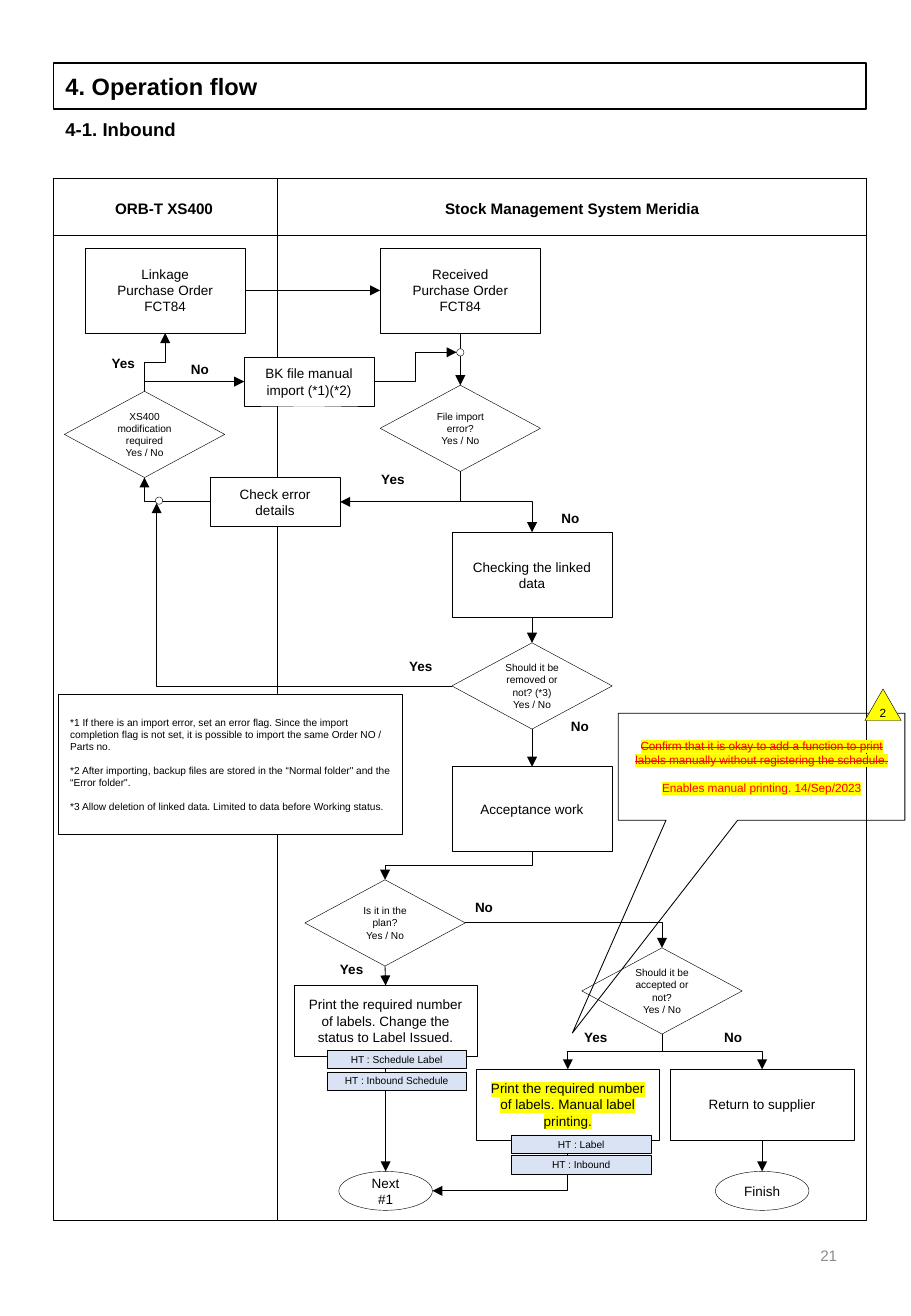
import lxml.etree
import pptx
import pptx.dml.color
import pptx.enum.shapes
import pptx.enum.text
import pptx.oxml.ns
import pptx.util

SHAPES = pptx.enum.shapes.MSO_SHAPE
CONNECTORS = pptx.enum.shapes.MSO_CONNECTOR
ALIGN = pptx.enum.text.PP_ALIGN
ANCHOR = pptx.enum.text.MSO_ANCHOR
qn = pptx.oxml.ns.qn

# Page and its grid of 75 columns by 108.3 rows
WIDTH, HEIGHT = pptx.util.Inches(7.5), pptx.util.Inches(10.83)
COLUMN, ROW = WIDTH / 75, HEIGHT / 108.3

COLORS = {"ink": "000000", "paper": "FFFFFF", "tag": "DAE3F3", "mark": "FFFF00",
          "alert": "FF0000", "page": "8C8C8C"}
TOP, LEFT, BOTTOM, RIGHT = range(4)
STEP = (13.2, 7)
DECISION = (13.2, 7.1)
SMALL_STEP = (10.7, 4)
WIDE_STEP = (15.1, 5.8)
TERMINAL = (7.7, 3.2)
JOINT = (0.6, 0.6)
TAG = (11.5, 1.5)


def rgb(name):
    return pptx.dml.color.RGBColor.from_string(COLORS[name])


def at(column, row):
    return round(column * COLUMN), round(row * ROW)


def write(shape, text, size, color="ink", bold=False, align=ALIGN.CENTER,
          anchor=ANCHOR.MIDDLE, gap=0):
    frame = shape.text_frame
    frame.text = text
    frame.word_wrap = True
    frame.vertical_anchor = anchor
    for index, paragraph in enumerate(frame.paragraphs):
        paragraph.alignment = align
        paragraph.space_before = pptx.util.Pt(gap if index else 0)
        for run in paragraph.runs:
            run.font.name = "Arial"
            run.font.size = pptx.util.Pt(size)
            run.font.bold = bold
            run.font.color.rgb = rgb(color)


def highlight(shape):
    for paragraph in shape.text_frame.paragraphs:
        for run in paragraph.runs:
            marker = lxml.etree.Element(qn("a:highlight"))
            lxml.etree.SubElement(marker, qn("a:srgbClr"), val=COLORS["mark"])
            run.font._element.find(qn("a:solidFill")).addnext(marker)


def box(slide, position, size, text="", points=8, kind=SHAPES.RECTANGLE, fill=None,
        line=0.25, **style):
    shape = slide.shapes.add_shape(kind, *at(*position), *at(*size))
    shape.shadow.inherit = False
    if fill:
        shape.fill.solid()
        shape.fill.fore_color.rgb = rgb(fill)
    else:
        shape.fill.background()
    shape.line.color.rgb = rgb("ink")
    shape.line.width = pptx.util.Pt(line)
    if text:
        write(shape, text, points, **style)
    return shape


def decision(slide, position, question):
    return box(slide, position, DECISION, question + "\nYes / No", 6,
               SHAPES.FLOWCHART_DECISION)


def terminal(slide, position, text):
    return box(slide, position, TERMINAL, text, kind=SHAPES.OVAL)


def joint(slide, position):
    return box(slide, position, JOINT, kind=SHAPES.OVAL, fill="paper")


def label(slide, position, size, text, points, **style):
    write(slide.shapes.add_textbox(*at(*position), *at(*size)), text, points, **style)


def side(shape, site):
    across = {LEFT: 0, RIGHT: shape.width}.get(site, shape.width // 2)
    down = {TOP: 0, BOTTOM: shape.height}.get(site, shape.height // 2)
    return shape.left + across, shape.top + down


def finish_line(connector, arrow=True):
    connector.line.color.rgb = rgb("ink")
    connector.line.width = pptx.util.Pt(0.5)
    properties = connector.element.spPr
    if arrow:
        lxml.etree.SubElement(properties.find(qn("a:ln")), qn("a:tailEnd"), type="triangle")
    lxml.etree.SubElement(properties, qn("a:effectLst"))


def straight(slide, source, target, source_site=BOTTOM, target_site=TOP):
    connector = slide.shapes.add_connector(
        CONNECTORS.STRAIGHT, *side(source, source_site), *side(target, target_site))
    connector.begin_connect(source, source_site)
    connector.end_connect(target, target_site)
    finish_line(connector)


def bent(slide, start, end, vertical=False, corner=False):
    """Arrow with one corner or two; vertical ones leave the start up or down."""
    (x1, y1), (x2, y2) = start, end
    if vertical:
        # The unrotated frame lies on its side around the same centre
        half_length, half_drop = abs(y2 - y1) / 2, abs(x2 - x1) / 2
        if (x2 > x1) == (y2 > y1):
            half_drop = -half_drop
        middle_x, middle_y = (x1 + x2) / 2, (y1 + y2) / 2
        frame = (middle_x - half_length, middle_y - half_drop,
                 middle_x + half_length, middle_y + half_drop)
    else:
        frame = (x1, y1, x2, y2)
    connector = slide.shapes.add_connector(CONNECTORS.ELBOW, *map(round, frame))
    properties = connector.element.spPr
    if vertical:
        properties.find(qn("a:xfrm")).set("rot", str((90 if y2 > y1 else 270) * 60000))
    if corner:
        properties.find(qn("a:prstGeom")).set("prst", "bentConnector2")
    finish_line(connector)


def add_frame(slide):
    # Headings, page number and the two lanes
    label(slide, (53, 100.4), (16.9, 5.8), "21", 9, color="page", align=ALIGN.RIGHT)
    box(slide, (4.4, 5.2), (66.9, 3.8), "4. Operation flow", 14, line=1, bold=True,
        align=ALIGN.LEFT)
    label(slide, (4.4, 9.2), (66.9, 2.9), "4-1. Inbound", 11, bold=True,
          align=ALIGN.LEFT, anchor=ANCHOR.TOP)
    for height in (85.7, 4.7):
        box(slide, (4.4, 14.7), (66.9, height))
    label(slide, (4.3, 14.8), (18.4, 4.7), "ORB-T XS400", 9, bold=True)
    label(slide, (22.9, 14.8), (48.4, 4.7), "Stock Management System Meridia", 9, bold=True)
    divider = slide.shapes.add_connector(CONNECTORS.STRAIGHT, *at(22.8, 14.7), *at(22.8, 100.4))
    finish_line(divider, arrow=False)


def add_import_flow(slide):
    # Purchase order import and its error loop
    linkage = box(slide, (7, 20.4), STEP, "Linkage\nPurchase Order\nFCT84")
    received = box(slide, (31.3, 20.4), STEP, "Received\nPurchase Order\nFCT84")
    import_error = decision(slide, (31.3, 31.7), "File import error?")
    manual = box(slide, (20.1, 29.4), SMALL_STEP, "BK file manual import (*1)(*2)",
                 fill="paper")
    details = box(slide, (17.3, 39.3), SMALL_STEP, "Check error details", fill="paper")
    modification = decision(slide, (5.3, 32.2), "XS400 modification required")
    checking = box(slide, (37.2, 43.8), STEP, "Checking the linked data")
    removal = decision(slide, (37.2, 52.9), "Should it be removed or not? (*3)")

    straight(slide, linkage, received, RIGHT, LEFT)
    straight(slide, received, import_error)
    straight(slide, checking, removal)
    bent(slide, side(import_error, BOTTOM), side(details, RIGHT), vertical=True, corner=True)
    bent(slide, side(import_error, BOTTOM), side(checking, TOP), vertical=True)
    bent(slide, side(details, LEFT), side(modification, BOTTOM), corner=True)
    bent(slide, side(modification, TOP), side(manual, LEFT), vertical=True, corner=True)
    bent(slide, side(modification, TOP), side(linkage, BOTTOM), vertical=True)
    bent(slide, side(removal, LEFT), at(12.9, 41.4), corner=True)
    joint(slide, (12.8, 40.9))
    merge = joint(slide, (37.6, 28.7))
    bent(slide, side(manual, RIGHT), side(merge, LEFT))
    return removal


def add_acceptance_flow(slide, removal):
    # Acceptance, label printing and the two ends
    acceptance = box(slide, (37.2, 63.1), STEP, "Acceptance work")
    planned = decision(slide, (25.1, 72.4), "Is it in the plan?")
    accepted = decision(slide, (47.9, 78), "Should it be accepted or not?")
    schedule_print = box(slide, (24.2, 81.1), WIDE_STEP,
                         "Print the required number of labels. Change the status to Label Issued.")
    manual_print = box(slide, (39.2, 88), WIDE_STEP,
                       "Print the required number of labels. Manual label printing.")
    highlight(manual_print)
    supplier = box(slide, (55.2, 88), WIDE_STEP, "Return to supplier")
    following = terminal(slide, (27.9, 96.4), "Next #1")
    finish = terminal(slide, (58.9, 96.4), "Finish")

    for source, target in ((removal, acceptance), (planned, schedule_print),
                           (schedule_print, following), (supplier, finish)):
        straight(slide, source, target)
    bent(slide, side(acceptance, BOTTOM), side(planned, TOP), vertical=True)
    bent(slide, side(planned, RIGHT), side(accepted, TOP), corner=True)
    for target in (manual_print, supplier):
        bent(slide, side(accepted, BOTTOM), side(target, TOP), vertical=True)
    bent(slide, side(manual_print, BOTTOM), side(following, RIGHT), vertical=True, corner=True)


def add_notes(slide):
    # Answers beside the decisions
    answers = {"Yes": ((29.8, 38.3), (7.6, 28.7), (32.1, 53.7), (26.4, 78.6), (46.5, 84.2)),
               "No": ((44.4, 41.5), (13.9, 29.2), (45.2, 58.6), (37.3, 73.5), (57.8, 84.2))}
    for answer, positions in answers.items():
        for position in positions:
            label(slide, position, (5.1, 2.3), answer, 8, bold=True)

    # Footnotes
    box(slide, (4.8, 57.1), (28.3, 11.6),
        "*1 If there is an import error, set an error flag. Since the import completion flag "
        "is not set, it is possible to import the same Order NO / Parts no.\n"
        "*2 After importing, backup files are stored in the “Normal folder\" and the "
        "“Error folder\".\n"
        "*3 Allow deletion of linked data. Limited to data before Working status.",
        6, fill="paper", align=ALIGN.LEFT, gap=7)

    # Review callout with its revision mark
    callout = box(slide, (50.9, 58.7), (23.6, 8.8),
                  "Confirm that it is okay to add a function to print labels manually without "
                  "registering the schedule.\nEnables manual printing. 14/Sep/2023",
                  7, SHAPES.RECTANGULAR_CALLOUT, line=0.5, color="alert", gap=8)
    callout.adjustments[0], callout.adjustments[1] = -0.66, 2.49
    highlight(callout)
    callout.text_frame.paragraphs[0].runs[0].font._element.set("strike", "sngStrike")
    revision = box(slide, (71.2, 56.7), (3, 2.6), "2", 7, SHAPES.ISOSCELES_TRIANGLE, "mark")
    frame = revision.text_frame
    frame.margin_left = frame.margin_right = frame.margin_top = frame.margin_bottom = 0

    # Handheld terminal tags
    tags = ((26.9, 86.4, "Schedule Label"), (26.9, 88.2, "Inbound Schedule"),
            (42.1, 93.4, "Label"), (42.1, 95.1, "Inbound"))
    for column, row, screen in tags:
        box(slide, (column, row), TAG, "HT : " + screen, 6, fill="tag")


def main():
    presentation = pptx.Presentation()
    presentation.slide_width, presentation.slide_height = WIDTH, HEIGHT
    slide = presentation.slides.add_slide(presentation.slide_layouts[6])
    add_frame(slide)
    removal = add_import_flow(slide)
    add_acceptance_flow(slide, removal)
    add_notes(slide)
    presentation.save("out.pptx")


if __name__ == "__main__":
    main()
